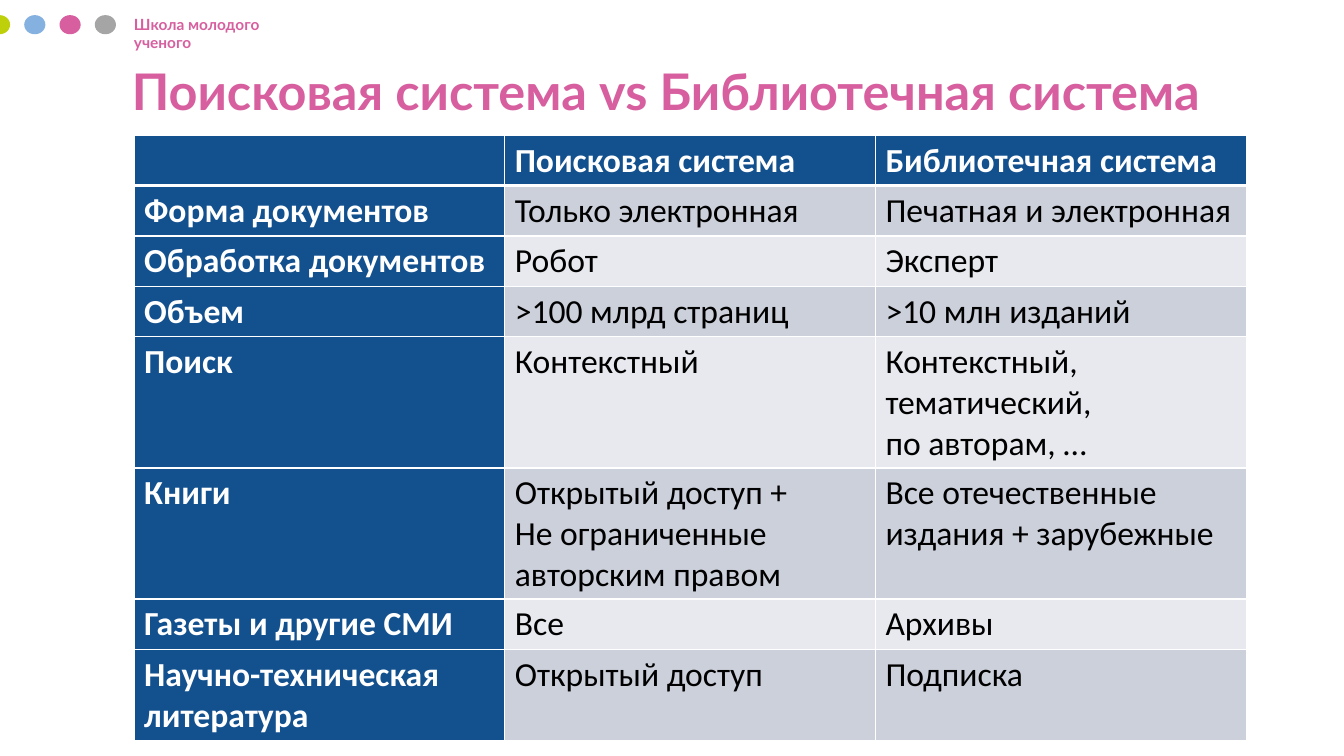
from lxml.etree import SubElement
from pptx import Presentation
from pptx.dml.color import RGBColor
from pptx.enum.shapes import MSO_SHAPE
from pptx.enum.text import MSO_ANCHOR
from pptx.oxml.ns import qn
from pptx.util import Inches, Pt

WHITE = RGBColor(0xFF, 0xFF, 0xFF)
BLACK = RGBColor(0, 0, 0)
PINK = RGBColor(0xD7, 0x5F, 0x9F)
LIME = RGBColor(0xBE, 0xD0, 0x0A)
SKY = RGBColor(0x85, 0xB1, 0xE0)
GREY = RGBColor(0xA5, 0xA5, 0xA5)
NAVY = RGBColor(0x13, 0x50, 0x8E)
BAND_DARK = RGBColor(0xCC, 0xD0, 0xDB)
BAND_LIGHT = RGBColor(0xE7, 0xE9, 0xEE)

ROWS = [
    ("", "Поисковая система", "Библиотечная система"),
    ("Форма документов", "Только электронная", "Печатная и электронная"),
    ("Обработка документов", "Робот", "Эксперт"),
    ("Объем", ">100 млрд страниц", ">10 млн изданий"),
    ("Поиск", "Контекстный", "Контекстный, тематический, \vпо авторам, …"),
    ("Книги", "Открытый доступ +\nНе ограниченные авторским правом",
     "Все отечественные издания + зарубежные"),
    ("Газеты и другие СМИ", "Все", "Архивы"),
    ("Научно-техническая литература", "Открытый доступ", "Подписка"),
]
ROW_HEIGHTS = [0.5, 0.5, 0.5, 0.5, 0.87, 1.24, 0.5, 0.87]


def set_font(p, name, size, color, bold):
    p.font.name = name
    p.font.size = Pt(size)
    p.font.color.rgb = color
    p.font.bold = bold


def add_text(s, text, size, left, top, width, height):
    tf = s.shapes.add_textbox(Inches(left), Inches(top), Inches(width), Inches(height)).text_frame
    tf.word_wrap = True
    p = tf.paragraphs[0]
    p.text = text
    set_font(p, "Lato", size, PINK, True)
    return tf


def add_header(s, left, top):
    """Row of dots followed by the school name."""
    for i, color in enumerate((LIME, SKY, PINK, GREY)):
        dot = s.shapes.add_shape(MSO_SHAPE.OVAL, Inches(left + i * 0.35), Inches(top + 0.05),
                                 Inches(0.21), Inches(0.19))
        dot.shadow.inherit = False
        dot.fill.solid()
        dot.fill.fore_color.rgb = color
        dot.line.fill.background()
    add_text(s, "Школа молодого ученого", 11, left + 1.34, top, 1.66, 0.29)


def add_title(s, left, top, width, height):
    tf = add_text(s, "Поисковая система vs Библиотечная система", 36, left, top, width, height)
    tf.vertical_anchor = MSO_ANCHOR.MIDDLE
    tf.paragraphs[0].line_spacing = 0.9


def set_borders(cell, top, bottom):
    """White borders; top and bottom are widths in points."""
    tc_pr = cell._tc.get_or_add_tcPr()
    for side, width in (("L", 1), ("R", 1), ("T", top), ("B", bottom)):
        ln = SubElement(tc_pr, qn(f"a:ln{side}"), w=str(Pt(width)))
        SubElement(SubElement(ln, qn("a:solidFill")), qn("a:srgbClr"), val=str(WHITE))


def add_comparison(s, left, top, width):
    table = s.shapes.add_table(len(ROWS), len(ROWS[0]), Inches(left), Inches(top),
                               Inches(width), Inches(sum(ROW_HEIGHTS))).table
    for r, (texts, height) in enumerate(zip(ROWS, ROW_HEIGHTS)):
        table.rows[r].height = Inches(height)
        for c, text in enumerate(texts):
            cell = table.cell(r, c)
            heading = r == 0 or c == 0
            set_borders(cell, top=3 if r == 1 else 1, bottom=3 if r == 0 else 1)
            cell.fill.solid()
            cell.fill.fore_color.rgb = NAVY if heading else BAND_DARK if r % 2 else BAND_LIGHT
            cell.text = text
            for p in cell.text_frame.paragraphs:
                set_font(p, "Calibri", 24, WHITE if heading else BLACK, heading)


def main():
    prs = Presentation()
    prs.slide_width, prs.slide_height = Inches(13.33), Inches(7.5)
    s = prs.slides.add_slide(prs.slide_layouts[6])
    add_header(s, -0.11, 0.1)
    add_comparison(s, 1.33, 1.34, 11.03)
    add_title(s, 1.21, 0.36, 11.16, 1.14)
    prs.save("out.pptx")


if __name__ == "__main__":
    main()
